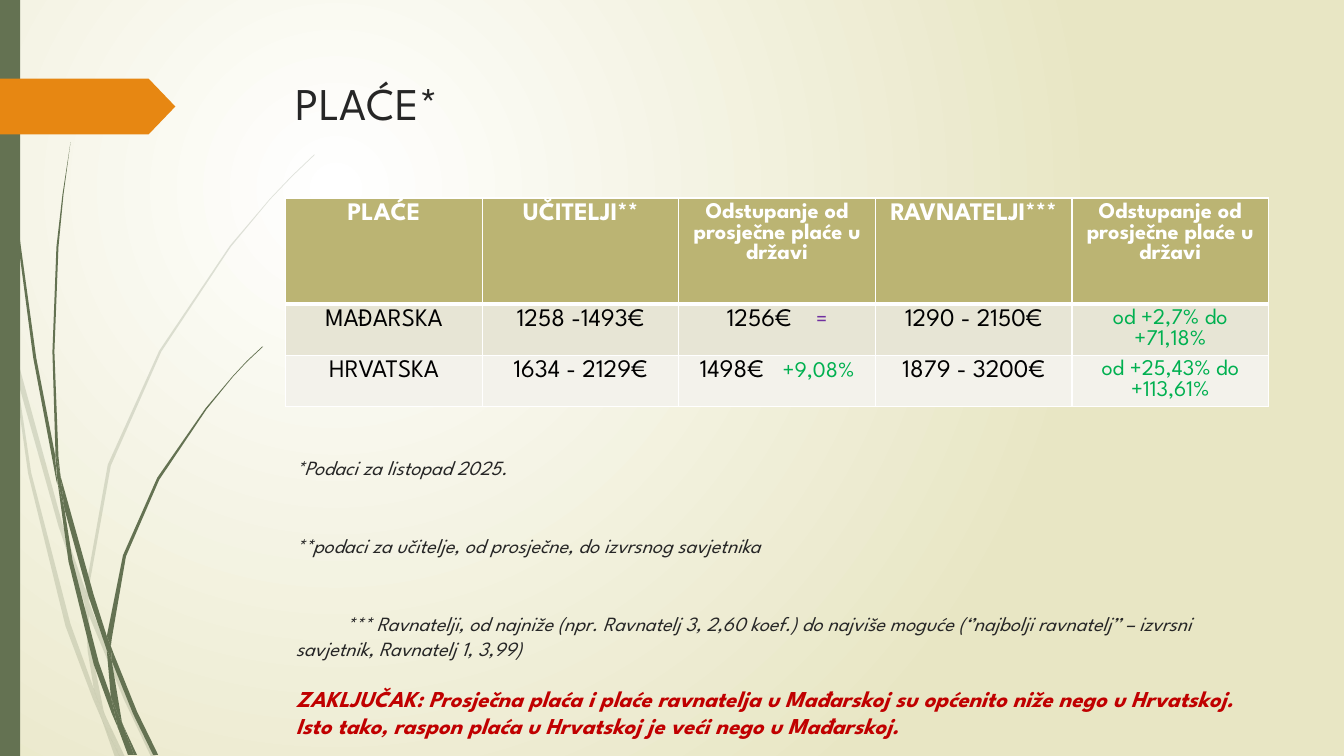
from lxml import etree
from pptx import Presentation
from pptx.dml.color import RGBColor
from pptx.enum.shapes import MSO_SHAPE as Preset
from pptx.enum.text import MSO_ANCHOR as Anchor, MSO_AUTO_SIZE as AutoSize, PP_ALIGN as Align
from pptx.oxml.ns import qn
from pptx.util import Cm, Pt

WHITE = RGBColor(0xFF, 0xFF, 0xFF)
BLACK = RGBColor(0, 0, 0)
INK = RGBColor(0x26, 0x26, 0x26)
CREAM = RGBColor(0xE8, 0xE6, 0xC4)
GRASS = RGBColor(0x64, 0x72, 0x52)
ORANGE = RGBColor(0xE7, 0x87, 0x12)
OLIVE = RGBColor(0xBB, 0xB4, 0x73)
SAND = RGBColor(0xE7, 0xE5, 0xD5)
IVORY = RGBColor(0xF3, 0xF2, 0xEB)
GREEN = RGBColor(0x00, 0xB0, 0x50)
PURPLE = RGBColor(0x70, 0x30, 0xA0)
RED = RGBColor(0xC0, 0, 0)

# Outlines of the grass pieces, on a grid of 0.0254 cm
GRID = Cm(0.0254)
PALE_GRASS = [
    [(11, 350), (9, 322), (0, 282), (0, 299), (10, 344)],
    [(58, 522), (84, 599), (85, 586), (62, 520), (14, 345), (17, 376)],
    [(92, 607), (88, 596), (88, 610), (123, 694), (150, 751), (155, 751), (127, 692)],
    [(119, 751), (124, 751), (105, 711)],
    [(93, 683), (70, 619), (31, 469), (17, 376), (11, 350), (28, 470), (65, 621), (92, 693),
     (101, 714), (99, 707)],
    [(84, 599), (87, 646), (93, 683), (96, 692), (105, 711), (103, 706), (91, 646), (88, 610),
     (88, 608)],
    [(88, 584), (110, 462), (160, 349), (229, 245), (268, 198), (290, 175), (312, 154),
     (312, 153), (289, 175), (268, 197), (228, 244), (158, 348), (107, 461), (85, 584),
     (85, 586), (88, 596)],
    [(101, 714), (114, 751), (119, 751)],
    [(88, 608), (88, 610), (88, 596), (85, 586), (84, 599)],
    [(96, 692), (93, 683), (99, 707), (101, 714), (119, 751), (105, 711)],
]
DARK_GRASS = [
    [(7, 110), (17, 233), (33, 355), (56, 477), (57, 481), (55, 457), (55, 453), (36, 355),
     (19, 232), (8, 109), (5, 48), (4, 0), (3, 0), (4, 48)],
    [(88, 592), (106, 645), (106, 631), (93, 590), (60, 472), (64, 505)],
    [(113, 649), (110, 641), (111, 656), (132, 708), (152, 749), (157, 749), (136, 706)],
    [(110, 691), (98, 657), (72, 556), (64, 505), (57, 477), (68, 557), (93, 659), (111, 708),
     (117, 722), (116, 717)],
    [(60, 472), (58, 453), (54, 349), (58, 245), (63, 193), (70, 141), (62, 193), (56, 245),
     (52, 349), (55, 449)],
    [(133, 749), (136, 749), (122, 719)],
    [(57, 477), (64, 505), (60, 472), (55, 449), (55, 453)],
    [(111, 633), (125, 552), (158, 476), (205, 406), (231, 374), (245, 359), (261, 344),
     (260, 344), (245, 358), (231, 373), (204, 405), (156, 474), (122, 551), (106, 631),
     (110, 641)],
    [(117, 722), (127, 749), (131, 749)],
    [(106, 645), (110, 691), (116, 706), (122, 719), (121, 716), (111, 656), (109, 651)],
    [(106, 645), (109, 651), (111, 656), (110, 641), (106, 631)],
    [(116, 706), (110, 691), (116, 717), (117, 722), (130, 749), (133, 749), (122, 719)],
]


class SalarySlide:
    font_name = "League Spartan"
    left, width = 7.2, 24.77

    def __init__(self, deck):
        self.slide = deck.slides.add_slide(deck.slide_layouts[1])
        self.shapes = self.slide.shapes

    def background(self, centre, edge):
        fill = self.slide.background.fill
        fill.gradient()
        for stop, color in zip(fill.gradient_stops, (centre, edge)):
            stop.color.rgb = color
        gradient = self.slide.element.find(".//" + qn("a:gradFill"))
        gradient.remove(gradient.find(qn("a:lin")))
        circle = etree.SubElement(gradient, qn("a:path"), path="circle")
        etree.SubElement(circle, qn("a:fillToRect"), l="50000", t="50000", r="100000", b="100000")

    def paint(self, shape, color, opacity=100):
        shape.shadow.inherit = False
        shape.fill.solid()
        shape.fill.fore_color.rgb = color
        shape.line.fill.background()
        if opacity < 100:
            tone = shape.element.spPr.find(".//" + qn("a:srgbClr"))
            etree.SubElement(tone, qn("a:alpha"), val=str(opacity * 1000))

    def preset(self, kind, x, y, width, height, color):
        shape = self.shapes.add_shape(kind, Cm(x), Cm(y), Cm(width), Cm(height))
        self.paint(shape, color)
        return shape

    def blade(self, points, opacity=100):
        outline = self.shapes.build_freeform(*points[0], scale=GRID)
        outline.add_line_segments(points[1:])
        self.paint(outline.convert_to_shape(), GRASS, opacity)

    def style(self, run, size, color, bold=False, italic=False):
        font = run.font
        font.name, font.size = self.font_name, Pt(size)
        font.bold, font.italic = bold, italic
        font.color.rgb = color

    def place(self, holder, y, height, inset=0):
        holder.left, holder.top = Cm(self.left), Cm(y)
        holder.width, holder.height = Cm(self.width), Cm(height)
        frame = holder.text_frame
        frame.auto_size, frame.word_wrap = AutoSize.NONE, True
        frame.vertical_anchor = Anchor.TOP
        frame.margin_top, frame.margin_bottom = Cm(inset), 0
        return frame

    def title(self, text, y, height):
        frame = self.place(self.shapes.title, y, height, inset=0.17)
        frame.text = text
        heading = frame.paragraphs[0]
        heading.alignment = Align.LEFT
        self.style(heading.runs[0], 32.4, INK)

    def notes(self, entries, y, height):
        frame = self.place(self.slide.placeholders[1], y, height)
        frame.text = "\n".join(entry[0] for entry in entries)
        for note, (_, size, color, bold, pitch, before, indent) in zip(frame.paragraphs, entries):
            props = note._p.get_or_add_pPr()
            props.set("marL", "0")
            props.set("indent", str(Cm(indent)))
            etree.SubElement(props, qn("a:buNone"))
            note.alignment = Align.LEFT
            note.line_spacing, note.space_before = Pt(pitch), Pt(before)
            self.style(note.runs[0], size, color, bold, italic=True)

    def cell(self, cell, parts, fill, bold, bottom):
        paragraph = cell.text_frame.paragraphs[0]
        paragraph.alignment = Align.CENTER
        for text, size, color, *gap in parts:
            run = paragraph.add_run()
            run.text = text
            self.style(run, size, color, bold)
            if gap:
                run._r.get_or_add_rPr().set("spc", str(gap[0] * 100))
        cell.fill.solid()
        cell.fill.fore_color.rgb = fill
        props = cell._tc.get_or_add_tcPr()
        for place, (side, points) in enumerate((("L", 1), ("R", 1), ("T", 1), ("B", bottom))):
            border = etree.Element(qn("a:ln" + side), w=str(Pt(points)))
            solid = etree.SubElement(border, qn("a:solidFill"))
            etree.SubElement(solid, qn("a:srgbClr"), val=str(WHITE))
            props.insert(place, border)

    def table(self, rows, y, heights, fills):
        columns = len(rows[0])
        table = self.shapes.add_table(len(rows), columns, Cm(self.left), Cm(y),
                                      Cm(self.width), Cm(sum(heights))).table
        table.horz_banding = False
        for column in table.columns:
            column.width = Cm(self.width / columns)
        for r, (row, height, fill) in enumerate(zip(rows, heights, fills)):
            table.rows[r].height = Cm(height)
            for c, parts in enumerate(row):
                self.cell(table.cell(r, c), parts, fill, bold=r == 0, bottom=1 if r else 3)


def main():
    deck = Presentation()
    deck.slide_width, deck.slide_height = Cm(33.87), Cm(19.05)
    salaries = SalarySlide(deck)

    # Backdrop: gradient, grass, side bar and arrow tab
    salaries.background(WHITE, CREAM)
    for opacity, pieces in ((20, PALE_GRASS), (100, DARK_GRASS)):
        for points in pieces:
            salaries.blade(points, opacity)
    salaries.preset(Preset.RECTANGLE, 0, 0, 0.51, 19.05, GRASS)
    tab = salaries.preset(Preset.PENTAGON, 0, 1.98, 4.42, 1.41, ORANGE)
    tab.adjustments[0] = 0.48

    salaries.title("PLAĆE*", 1.73, 3.2)

    # Salary table: each cell is a list of (text, size, colour, extra gap)
    deviation = [("Odstupanje od prosječne plaće u državi", 16, WHITE)]
    header = [[("PLAĆE", 18, WHITE)], [("UČITELJI**", 18, WHITE)], deviation,
              [("RAVNATELJI***", 18, WHITE)], deviation]
    countries = [
        ("MAĐARSKA", "1258 -1493€", "1256€", 13, "=", PURPLE,
         "1290 - 2150€", "od +2,7% do +71,18%"),
        ("HRVATSKA", "1634 - 2129€", "1498€", 9, "+9,08%", GREEN,
         "1879 - 3200€", "od +25,43% do +113,61%"),
    ]
    rows = [header] + [
        [[(country, 18, BLACK)], [(teachers, 18, BLACK)],
         [(average, 18, BLACK), (" ", 18, BLACK, gap), (change, 16, tone)],
         [(heads, 18, BLACK)], [(spread, 16, GREEN)]]
        for country, teachers, average, gap, change, tone, heads, spread in countries]
    salaries.table(rows, 4.99, [2.67, 1.29, 1.29], [OLIVE, SAND, IVORY])

    # Footnotes and conclusion: text, size, colour, bold, pitch, space before, indent
    salaries.notes([
        ("*Podaci za listopad 2025.", 14.4, INK, False, 17.9, 0, 0),
        ("**podaci za učitelje, od prosječne, do izvrsnog savjetnika",
         14.4, INK, False, 17.9, 37.8, 0),
        ("*** Ravnatelji, od najniže (npr. Ravnatelj 3, 2,60 koef.) do najviše moguće "
         "(‘’najbolji ravnatelj’’ – izvrsni savjetnik, Ravnatelj 1, 3,99)",
         14.4, INK, False, 17.9, 37.8, 1.27),
        ("ZAKLJUČAK: Prosječna plaća i plaće ravnatelja u Mađarskoj su općenito niže nego u "
         "Hrvatskoj. Isto tako, raspon plaća u Hrvatskoj je veći nego u Mađarskoj.",
         16.2, RED, True, 19.3, 17.8, 0),
    ], 11.45, 7.4)

    deck.save("out.pptx")


if __name__ == "__main__":
    main()
